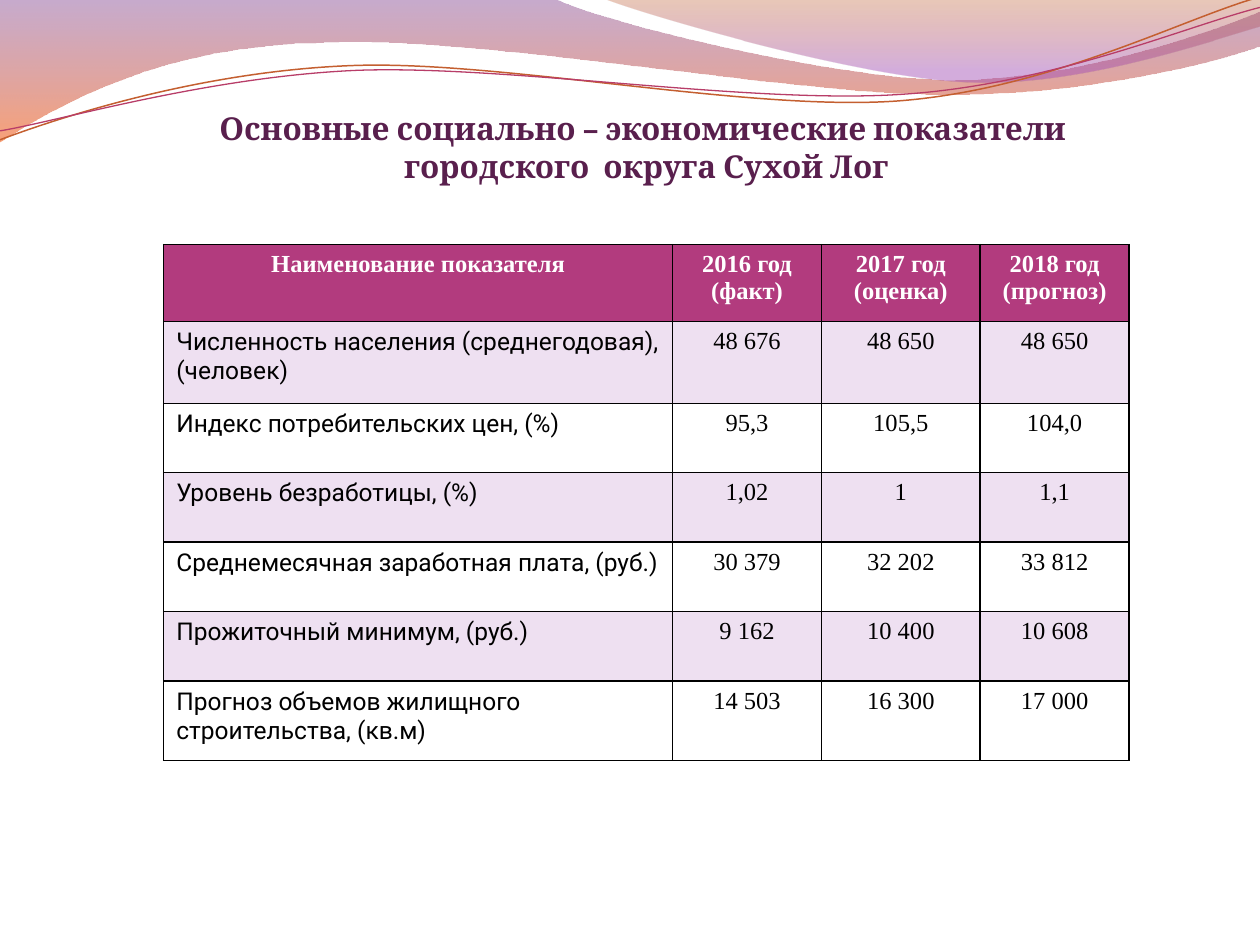
from dataclasses import dataclass
from typing import Optional

from lxml import etree
from pptx import Presentation
from pptx import util as u
from pptx.dml.color import RGBColor
from pptx.enum import text
from pptx.oxml import ns

Point = tuple[float, float]
Segment = tuple[Point, ...]  # one point: straight line; three points: Bézier curve


@dataclass(frozen=True)
class Theme:
    title_font: str = "Cambria"
    label_font: str = "Roboto"
    value_font: str = "Times New Roman"
    title_size: int = 18
    table_size: int = 14
    title_color: str = "591F4D"
    header_fill: str = "B23B7E"
    header_text: str = "FFFFFF"
    body_text: str = "000000"
    band_fill: str = "AC66BB"
    band_opacity: int = 20
    border: str = "000000"
    border_width: float = 1


@dataclass(frozen=True)
class Stop:
    position: float
    color: str
    opacity: int


@dataclass(frozen=True)
class Wave:
    box: tuple[float, float, float, float]  # left, top, width, height
    start: Point
    segments: tuple[Segment, ...]
    stops: tuple[Stop, ...] = ()
    line_color: Optional[str] = None
    line_width: float = 0
    rotation: float = 0


@dataclass(frozen=True)
class Indicator:
    label: str
    values: tuple[str, str, str]
    height: float = 1.4


THEME = Theme()
LINE_ROTATION = 357.3

# Boxes and points are in centimetres, before rotation
WAVES = (
    Wave((-0.03, -0.03, 25.45, 2.9), (0, -0.03), (
        ((11.18, -0.03),),
        ((12.09, 0.43), (16.87, 1.6), (19.25, 1.6)),
        ((21.67, 1.6), (24.33, 0.66), (25.4, 0.23)),
        ((25.43, 0.91),),
        ((24.97, 1.12), (22.1, 1.93), (18.95, 1.9)),
        ((15.8, 1.9), (9.7, 0.71), (6.53, 0.86)),
        ((3.28, 0.89), (1.17, 2.11), (-0.03, 2.87)),
        ((0, -0.03),),
    ), stops=(Stop(0, "834591", 45), Stop(1, "F35307", 55))),
    Wave((12.17, -0.03, 13.23, 1.78), (12.17, -0.03), (
        ((12.93, 0.28), (17.32, 1.57), (19.53, 1.65)),
        ((21.74, 1.75), (24.41, 0.81), (25.4, 0.53)),
        ((25.4, 0),),
        ((12.17, -0.03),),
    ), stops=(Stop(0, "B74915", 30), Stop(0.8, "A14BB4", 45))),
    Wave((-0.05, 0.56, 25.45, 1.8), (-0.05, 2.22), (
        ((1.19, 1.82), (4.02, 1.04), (7.05, 1.06)),
        ((10.05, 1.07), (15.02, 2.37), (18.08, 2.29)),
        ((21.13, 2.2), (23.87, 0.91), (25.41, 0.55)),
    ), line_color="C45F30", line_width=0.85, rotation=LINE_ROTATION),
    Wave((-0.05, 0.76, 25.48, 1.48), (-0.04, 2.04), (
        ((1.16, 1.9), (4.18, 1.15), (7.2, 1.16)),
        ((10.25, 1.19), (15.13, 2.23), (18.19, 2.16)),
        ((21.21, 2.1), (23.93, 1.06), (25.45, 0.75)),
    ), line_color="B83D68", line_width=0.75, rotation=LINE_ROTATION),
)

TITLE = "Основные социально – экономические показатели \vгородского  округа Сухой Лог"
COLUMN_WIDTHS = (10.26, 3, 3.2, 3)
HEADER = Indicator("Наименование показателя",
                   ("2016 год (факт)", "2017 год (оценка)", "2018 год (прогноз)"), 1.55)
INDICATORS = (
    Indicator("Численность населения (среднегодовая), (человек)",
              ("48 676", "48 650", "48 650"), 1.65),
    Indicator("Индекс потребительских цен, (%)", ("95,3", "105,5", "104,0")),
    Indicator("Уровень безработицы, (%)", ("1,02", "1", "1,1")),
    Indicator("Среднемесячная заработная плата, (руб.)", ("30 379", "32 202", "33 812")),
    Indicator("Прожиточный минимум, (руб.)", ("9 162", "10 400", "10 608")),
    Indicator("Прогноз объемов жилищного строительства, (кв.м)",
              ("14 503", "16 300", "17 000"), 1.6),
)


def apply_format(target, values: dict) -> None:
    for name, value in values.items():
        setattr(target, name, value)


def format_font(font, name: str, size: int, color: str, bold: bool) -> None:
    apply_format(font, {"name": name, "size": u.Pt(size), "bold": bold})
    font.color.rgb = RGBColor.from_string(color)


def set_opacity(element, percentages: list[int]) -> None:
    for color, percent in zip(element.iter(ns.qn("a:srgbClr")), percentages):
        etree.SubElement(color, ns.qn("a:alpha"), val=str(percent * 1000))


def set_curves(shape, wave: Wave) -> None:
    """Give the freeform its box and true Bézier segments."""
    left, top, width, height = (u.Cm(length) for length in wave.box)
    apply_format(shape, {"left": left, "top": top, "width": width, "height": height,
                         "rotation": wave.rotation})
    outline = next(shape._element.iter(ns.qn("a:path")))
    outline.set("w", str(width))
    outline.set("h", str(height))
    for child in list(outline):
        outline.remove(child)
    commands = {1: "a:lnTo", 3: "a:cubicBezTo"}
    steps = [("a:moveTo", (wave.start,))]
    steps += [(commands[len(segment)], segment) for segment in wave.segments]
    for command, points in steps:
        step = etree.SubElement(outline, ns.qn(command))
        for x, y in points:
            etree.SubElement(step, ns.qn("a:pt"),
                             x=str(u.Cm(x) - left), y=str(u.Cm(y) - top))
    if wave.stops:
        etree.SubElement(outline, ns.qn("a:close"))


def draw_wave(slide, wave: Wave) -> None:
    builder = slide.shapes.build_freeform(*(u.Cm(length) for length in wave.start))
    builder.add_line_segments([(u.Cm(segment[-1][0]), u.Cm(segment[-1][1]))
                               for segment in wave.segments], close=False)
    shape = builder.convert_to_shape()
    set_curves(shape, wave)
    shape.shadow.inherit = False
    if wave.stops:
        shape.line.fill.background()
        shape.fill.gradient()
        shape.fill.gradient_angle = 270
        for target, stop in zip(shape.fill.gradient_stops, wave.stops):
            target.position = stop.position
            target.color.rgb = RGBColor.from_string(stop.color)
        set_opacity(shape._element.spPr, [stop.opacity for stop in wave.stops])
    else:
        shape.fill.background()
        shape.line.color.rgb = RGBColor.from_string(wave.line_color)
        shape.line.width = u.Pt(wave.line_width)


def draw_title(slide) -> None:
    title = slide.shapes.title
    slide.shapes._spTree.append(title._element)  # in front of the waves
    apply_format(title, {"left": u.Cm(1.5), "top": u.Cm(1.93),
                         "width": u.Cm(23.06), "height": u.Cm(1.8)})
    frame = title.text_frame
    apply_format(frame, {"margin_left": 0, "margin_right": 0, "margin_bottom": 0,
                         "margin_top": u.Cm(0.13), "word_wrap": True,
                         "auto_size": text.MSO_AUTO_SIZE.NONE,
                         "vertical_anchor": text.MSO_ANCHOR.BOTTOM})
    paragraph = frame.paragraphs[0]
    paragraph.text = TITLE
    paragraph.alignment = text.PP_ALIGN.CENTER
    for run in paragraph.runs:
        format_font(run.font, THEME.title_font, THEME.title_size, THEME.title_color, True)


def draw_borders(cell) -> None:
    properties = cell._tc.get_or_add_tcPr()
    for index, side in enumerate(("lnL", "lnR", "lnT", "lnB")):
        line = etree.Element(ns.qn(f"a:{side}"), w=str(u.Pt(THEME.border_width)))
        fill = etree.SubElement(line, ns.qn("a:solidFill"))
        etree.SubElement(fill, ns.qn("a:srgbClr"), val=THEME.border)
        properties.insert(index, line)


def fill_cell(cell, content: str, row: int, column: int) -> None:
    header = row == 0
    is_label = column == 0 and not header
    cell.text = content
    paragraph = cell.text_frame.paragraphs[0]
    paragraph.alignment = text.PP_ALIGN.LEFT if is_label else text.PP_ALIGN.CENTER
    format_font(paragraph.runs[0].font,
                THEME.label_font if is_label else THEME.value_font, THEME.table_size,
                THEME.header_text if header else THEME.body_text, header)
    if header or row % 2:
        cell.fill.solid()
        cell.fill.fore_color.rgb = RGBColor.from_string(
            THEME.header_fill if header else THEME.band_fill)
        if not header:
            set_opacity(cell._tc.tcPr, [THEME.band_opacity])
    else:
        cell.fill.background()
    draw_borders(cell)


def draw_table(slide) -> None:
    rows = (HEADER, *INDICATORS)
    table = slide.shapes.add_table(
        len(rows), len(COLUMN_WIDTHS), u.Cm(3.3), u.Cm(4.93),
        u.Cm(sum(COLUMN_WIDTHS)), u.Cm(sum(row.height for row in rows))).table
    for column, width in zip(table.columns, COLUMN_WIDTHS):
        column.width = u.Cm(width)
    for row_index, row in enumerate(rows):
        table.rows[row_index].height = u.Cm(row.height)
        for column_index, content in enumerate((row.label, *row.values)):
            fill_cell(table.cell(row_index, column_index), content, row_index, column_index)


def main() -> None:
    presentation = Presentation()
    apply_format(presentation, {"slide_width": u.Cm(25.4), "slide_height": u.Cm(19.05)})
    slide = presentation.slides.add_slide(presentation.slide_layouts[5])
    for wave in WAVES:
        draw_wave(slide, wave)
    draw_title(slide)
    draw_table(slide)
    presentation.save("out.pptx")


if __name__ == "__main__":
    main()
